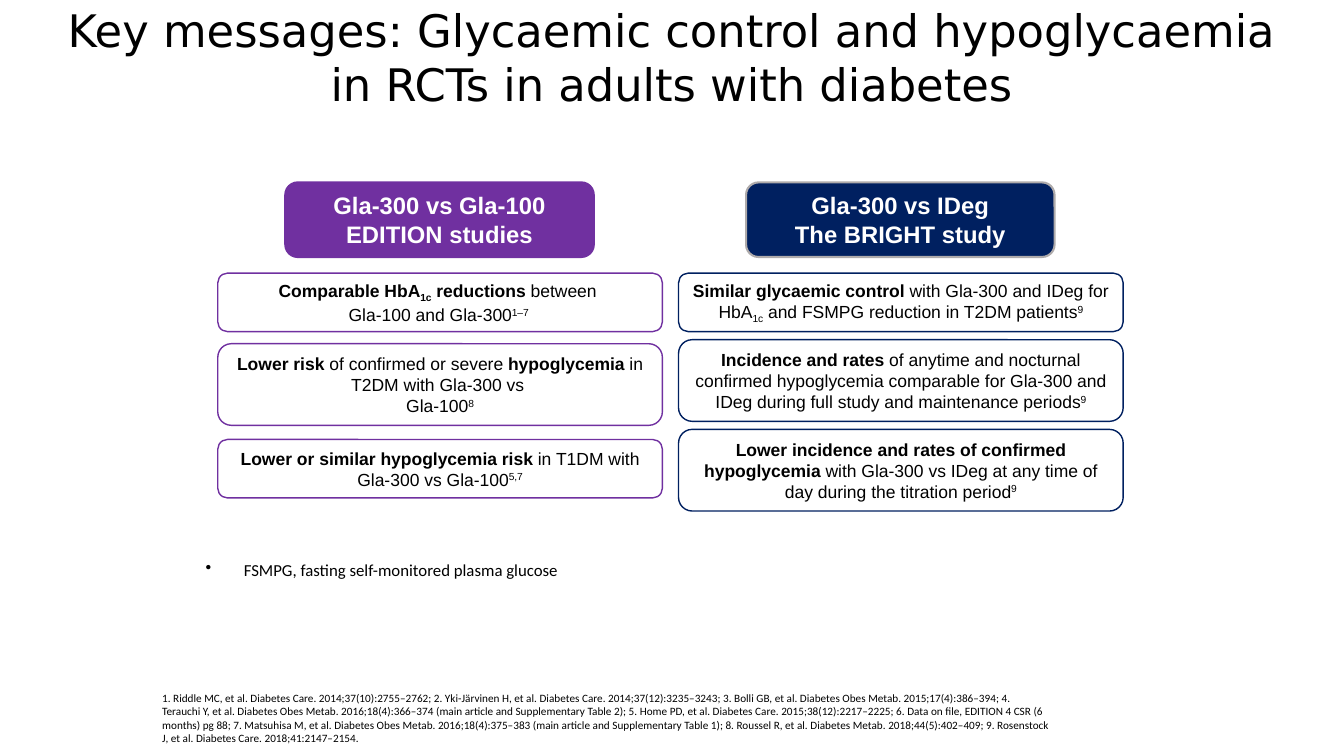
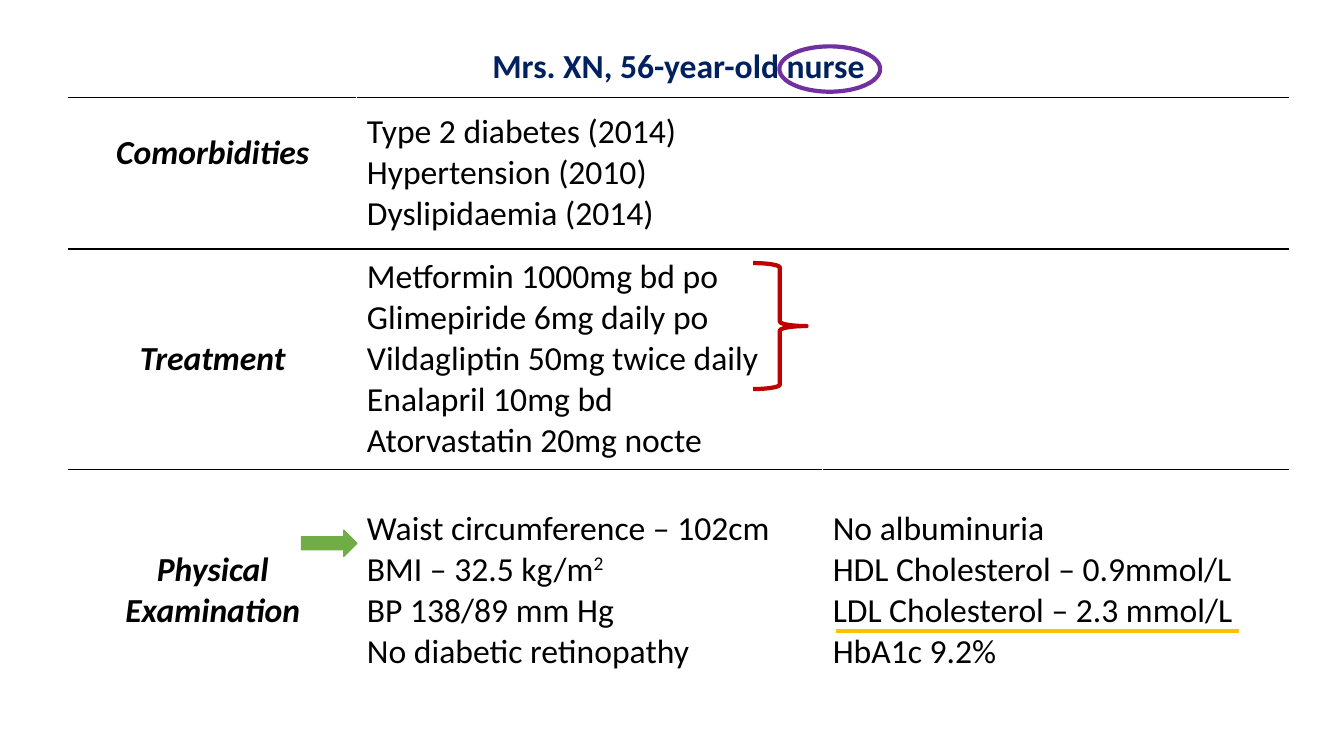
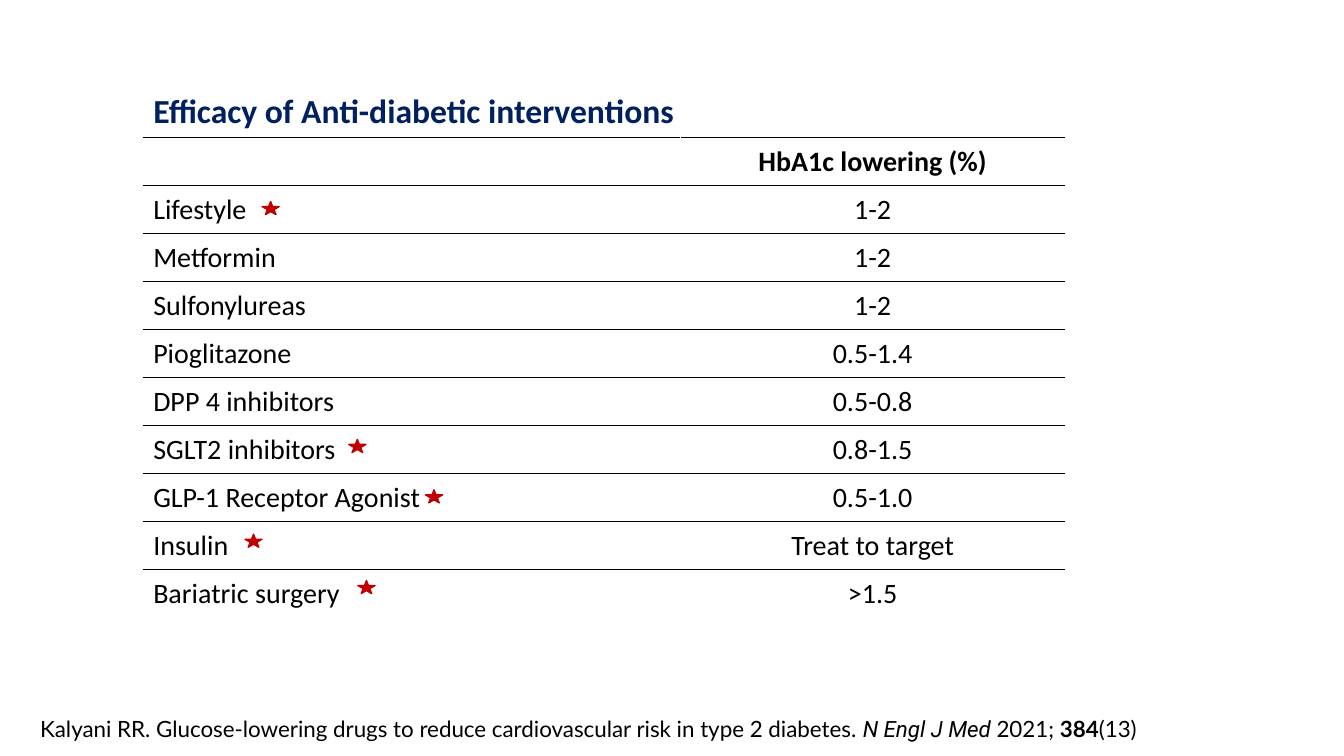
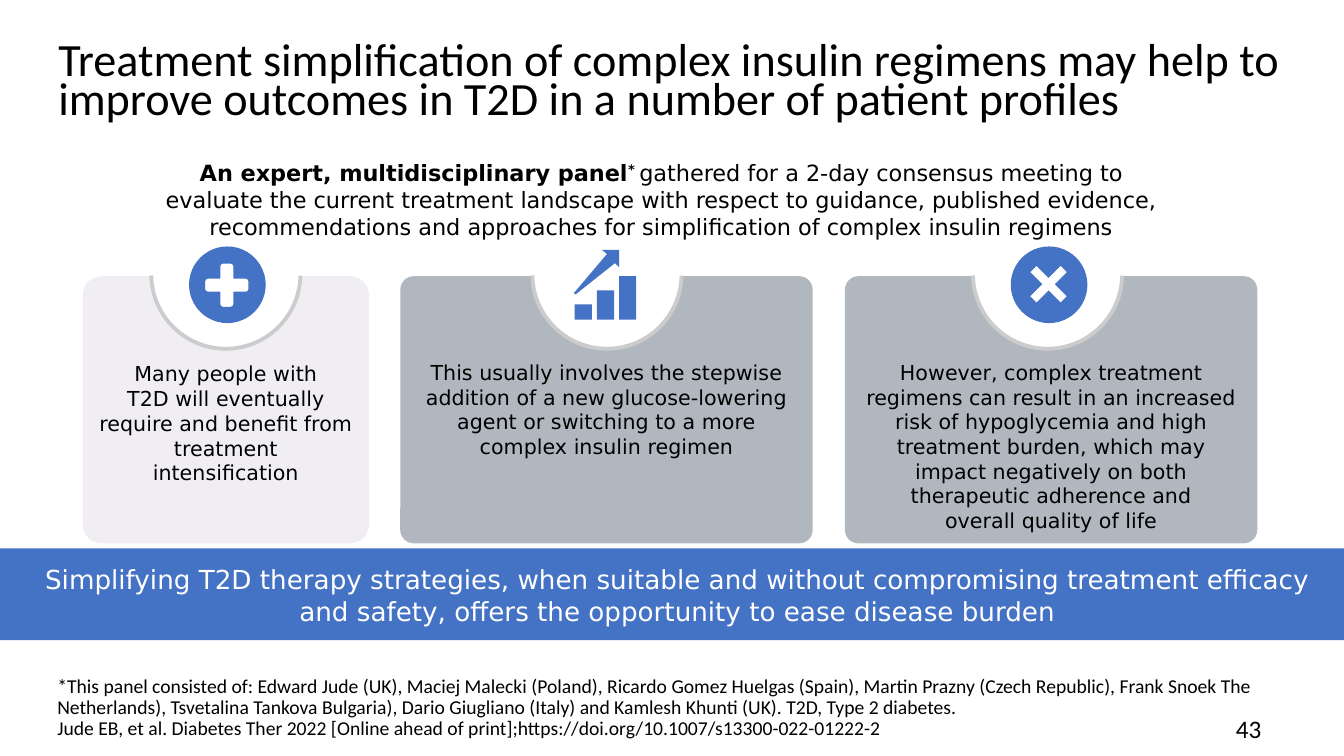
from lxml.etree import SubElement
from pptx import Presentation
from pptx.dml.color import RGBColor
from pptx.enum.shapes import MSO_CONNECTOR, MSO_SHAPE
from pptx.enum.text import MSO_ANCHOR, PP_ALIGN
from pptx.oxml.ns import qn
from pptx.util import Inches, Pt

BLACK = RGBColor(0x00, 0x00, 0x00)
WHITE = RGBColor(0xFF, 0xFF, 0xFF)
PURPLE = RGBColor(0x70, 0x30, 0xA0)
NAVY = RGBColor(0x00, 0x20, 0x60)
SILVER = RGBColor(0xAF, 0xAB, 0xAB)
RED = RGBColor(0xC0, 0x00, 0x00)
GREEN = RGBColor(0x70, 0xAD, 0x47)
GOLD = RGBColor(0xFF, 0xC0, 0x00)
BLUE = RGBColor(0x44, 0x72, 0xC4)
SLATE = RGBColor(0x3D, 0x4C, 0x5F)
LAVENDER = RGBColor(0xF1, 0xEE, 0xF3)
RING_GREY = RGBColor(0xCC, 0xCC, 0xCC)

CALIBRI, ARIAL, DEJAVU, LATO, ROBOTO = "Calibri", "Arial", "DejaVu Sans", "Lato", "Roboto"
CENTER, LEFT = PP_ALIGN.CENTER, PP_ALIGN.LEFT
TOP, MIDDLE = MSO_ANCHOR.TOP, MSO_ANCHOR.MIDDLE
BASELINES = {"^": "30000", "_": "-25000"}


class Deck:
    """Holds the presentation, its style and the current slide."""

    def __init__(self):
        self.presentation = Presentation()
        self.presentation.slide_width = Inches(13.33)
        self.presentation.slide_height = Inches(7.5)
        self.slide = None

    def new_slide(self):
        """Start a blank slide."""
        self.slide = self.presentation.slides.add_slide(self.presentation.slide_layouts[6])

    def fill_text(self, frame, paragraphs, size, font=CALIBRI, color=BLACK, marks="",
                  align=LEFT, spacing=None):
        """Fill a frame; marks are b bold, i italic, ^ superscript, _ subscript."""
        for index, content in enumerate(paragraphs):
            paragraph = frame.add_paragraph() if index else frame.paragraphs[0]
            paragraph.alignment = align
            if spacing:
                paragraph.line_spacing = spacing
            pieces = [(content, marks)] if isinstance(content, str) else content
            for text, piece_marks in pieces:
                for number, part in enumerate(text.split("\n")):
                    if number:
                        paragraph.add_line_break()
                        SubElement(paragraph._p[-1], qn("a:rPr"), sz=str(int(size * 100)))
                    run = paragraph.add_run()
                    run.text = part
                    run.font.size = Pt(size)
                    run.font.name = font
                    run.font.color.rgb = color
                    run.font.bold = "b" in piece_marks
                    run.font.italic = "i" in piece_marks
                    for mark in set(piece_marks) & set(BASELINES):
                        run._r.get_or_add_rPr().set("baseline", BASELINES[mark])

    def setup_frame(self, frame, insets, anchor):
        """Wrap a frame and set its insets and anchor."""
        frame.word_wrap = True
        frame.vertical_anchor = anchor
        frame.margin_left, frame.margin_top, frame.margin_right, frame.margin_bottom = (
            Inches(inset) for inset in insets)

    def text(self, box, paragraphs, size, insets=(0.1, 0.05, 0.1, 0.05), anchor=TOP, **style):
        """Add a text box and return its frame."""
        frame = self.slide.shapes.add_textbox(*map(Inches, box)).text_frame
        self.setup_frame(frame, insets, anchor)
        self.fill_text(frame, paragraphs, size, **style)
        return frame

    def paint(self, shape, fill, line, width):
        """Set fill and line and drop the shadow."""
        shape.shadow.inherit = False
        if fill is None:
            shape.fill.background()
        else:
            shape.fill.solid()
            shape.fill.fore_color.rgb = fill
        if line is None:
            shape.line.fill.background()
        else:
            shape.line.color.rgb = line
            shape.line.width = Pt(width)

    def shape(self, kind, box, fill=None, line=None, width=1, adjustments=(), alpha=None):
        """Add a preset shape."""
        shape = self.slide.shapes.add_shape(kind, *map(Inches, box))
        self.paint(shape, fill, line, width)
        for index, value in enumerate(adjustments):
            shape.adjustments[index] = value
        if alpha:
            color = shape._element.spPr.find(qn("a:solidFill"))[0]
            SubElement(color, qn("a:alpha"), val=str(alpha * 1000))
        return shape

    def panel(self, kind, box, paragraphs, size, insets=(0.1, 0.05, 0.1, 0.05),
              anchor=MIDDLE, font=ARIAL, color=BLACK, marks="", **look):
        """Add a shape with centred text."""
        frame = self.shape(kind, box, **look).text_frame
        self.setup_frame(frame, insets, anchor)
        self.fill_text(frame, paragraphs, size, font, color, marks, CENTER)

    def outline(self, contours, fill, line=None, width=0.75):
        """Add a freeform made of closed contours."""
        contours = [[(Inches(x), Inches(y)) for x, y in contour] for contour in contours]
        builder = self.slide.shapes.build_freeform(*contours[0][0])
        for index, contour in enumerate(contours):
            if index:
                builder.move_to(*contour[0])
            builder.add_line_segments(contour[1:], close=True)
        self.paint(builder.convert_to_shape(), fill, line, width)

    def line(self, start, end, color, width):
        """Add a straight line."""
        connector = self.slide.shapes.add_connector(
            MSO_CONNECTOR.STRAIGHT, *map(Inches, start + end))
        connector.line.color.rgb = color
        connector.line.width = Pt(width)
        SubElement(connector._element.spPr, qn("a:effectLst"))

    def table(self, box, columns, rows):
        """Add a white table with black rules between its rows."""
        table = self.slide.shapes.add_table(
            len(rows), len(columns), *map(Inches, box)).table
        table.first_row = table.horz_banding = False
        for column, width in zip(table.columns, columns):
            column.width = Inches(width)
        for index, (row, height) in enumerate(zip(table.rows, rows)):
            row.height = Inches(height)
            for cell in row.cells:
                cell.vertical_anchor = MIDDLE
                cell.fill.solid()
                cell.fill.fore_color.rgb = WHITE
                if index < len(rows) - 1:
                    self.rule(cell, "a:lnB")
                if index:
                    self.rule(cell, "a:lnT")
        return table

    def rule(self, cell, side):
        """Draw a black border on one side of a cell."""
        properties = cell._tc.get_or_add_tcPr()
        border = SubElement(properties, qn(side), w=str(Pt(1)))
        SubElement(SubElement(border, qn("a:solidFill")), qn("a:srgbClr"), val=str(BLACK))
        properties.insert(0, border)


def quarter_turns(center, arm):
    """Repeat the points of one arm at four right angles round a centre."""
    points = []
    for _ in range(4):
        points += [(center[0] + x, center[1] + y) for x, y in arm]
        arm = [(-y, x) for x, y in arm]
    return points


def key_messages(deck):
    """Build the slide of trial messages."""
    deck.new_slide()
    deck.text((0.52, 0.15, 12.29, 0.83),
              ["Key messages: Glycaemic control and hypoglycaemia in RCTs in adults with diabetes"],
              32, anchor=MIDDLE, font=DEJAVU, align=CENTER)
    note = deck.text((1.94, 5.5, 4.63, 0.31), ["FSMPG, fasting self-monitored plasma glucose"], 12)
    properties = note.paragraphs[0]._p.get_or_add_pPr()
    properties.set("marL", str(Inches(0.38)))
    properties.set("indent", str(Inches(-0.38)))
    SubElement(properties, qn("a:buChar"), char="•")
    deck.text((1.51, 6.81, 9.03, 0.52), [
        "1. Riddle MC, et al. Diabetes Care. 2014;37(10):2755–2762; "
        "2. Yki-Järvinen H, et al. Diabetes Care. 2014;37(12):3235–3243; "
        "3. Bolli GB, et al. Diabetes Obes Metab. 2015;17(4):386–394; "
        "4. Terauchi Y, et al. Diabetes Obes Metab. 2016;18(4):366–374 "
        "(main article and Supplementary Table 2); "
        "5. Home PD, et al. Diabetes Care. 2015;38(12):2217–2225; "
        "6. Data on file, EDITION 4 CSR (6 months) pg 88; "
        "7. Matsuhisa M, et al. Diabetes Obes Metab. 2016;18(4):375–383 "
        "(main article and Supplementary Table 1); "
        "8. Roussel R, et al. Diabetes Metab. 2018;44(5):402–409; "
        "9. Rosenstock J, et al. Diabetes Care. 2018;41:2147–2154."], 8)
    studies = [
        (2.16, PURPLE, PURPLE, ["Gla-300 vs Gla-100", "EDITION studies"], [
            (2.71, 0.58, [("Comparable HbA", "b"), ("1c", "b_"), (" reductions ", "b"),
                          ("between \nGla-100 and Gla-300", ""), ("1–7 ", "^")]),
            (3.41, 0.81, [("Lower risk ", "b"), ("of confirmed or severe ", ""),
                          ("hypoglycemia", "b"), (" in T2DM with Gla-300 vs \nGla-100", ""),
                          ("8", "^")]),
            (4.36, 0.58, [("Lower or similar hypoglycemia risk ", "b"),
                          ("in T1DM with Gla-300 vs Gla-100", ""), ("5,7", "^")])]),
        (6.73, NAVY, SILVER, ["Gla-300 vs IDeg", "The BRIGHT study"], [
            (2.71, 0.58, [("Similar glycaemic control ", "b"),
                          ("with Gla-300 and IDeg for HbA", ""), ("1c", "_"),
                          (" and FSMPG reduction in T2DM patients", ""), ("9", "^")]),
            (3.37, 0.81, [("Incidence and rates ", "b"),
                          ("of anytime and nocturnal confirmed hypoglycemia comparable for "
                           "Gla-300 and IDeg during full study and maintenance periods", ""),
                          ("9", "^")]),
            (4.26, 0.81, [("Lower incidence and rates of confirmed hypoglycemia ", "b"),
                          ("with Gla-300 vs IDeg at any time of day during the titration period",
                           ""), ("9", "^")])])]
    for left, color, edge, heading, messages in studies:
        deck.panel(MSO_SHAPE.ROUNDED_RECTANGLE, (left + 0.67, 1.81, 3.06, 0.74), heading, 17,
                   color=WHITE, marks="b", fill=color, line=edge, width=1.5)
        for top, height, message in messages:
            deck.panel(MSO_SHAPE.ROUNDED_RECTANGLE, (left, top, 4.41, height), [message], 12.5,
                       fill=WHITE, line=color)


def patient_case(deck):
    """Build the slide of the patient's history."""
    deck.new_slide()
    table = deck.table((0.68, 0.36, 12.09, 6.69), [2.86, 4.62, 4.62], [0.61, 1.5, 2.19, 2.39])
    table.cell(0, 0).merge(table.cell(0, 2))
    deck.fill_text(table.cell(0, 0).text_frame, ["Mrs. XN, 56-year-old nurse"], 24,
                   color=NAVY, marks="b", align=CENTER)
    sections = [
        ("Comorbidities", [["Type 2 diabetes (2014)", "Hypertension (2010)",
                            "Dyslipidaemia (2014)"]]),
        ("Treatment", [["Metformin 1000mg bd po", "Glimepiride 6mg daily po",
                        "Vildagliptin 50mg twice daily", "Enalapril 10mg bd",
                        "Atorvastatin 20mg nocte"]]),
        ("Physical Examination", [
            ["Waist circumference – 102cm", [("BMI – 32.5 kg/m", ""), ("2", "^")],
             "BP 138/89 mm Hg", "No diabetic retinopathy"],
            ["No albuminuria", "HDL Cholesterol – 0.9mmol/L", "LDL Cholesterol – 2.3 mmol/L",
             "HbA1c 9.2%"]])]
    for row, (heading, lists) in enumerate(sections, 1):
        deck.fill_text(table.cell(row, 0).text_frame, [heading], 24, marks="bi", align=CENTER)
        if len(lists) == 1:
            table.cell(row, 1).merge(table.cell(row, 2))
        for column, findings in enumerate(lists, 1):
            deck.fill_text(table.cell(row, column).text_frame, findings, 24)
    table.cell(1, 0).margin_bottom = Inches(0.45)
    deck.shape(MSO_SHAPE.OVAL, (7.73, 0.46, 1, 0.45), line=PURPLE, width=3)
    deck.shape(MSO_SHAPE.RIGHT_BRACE, (7.47, 2.61, 0.53, 1.25), line=RED, width=3)
    deck.shape(MSO_SHAPE.RIGHT_ARROW, (2.99, 5.26, 0.55, 0.26), fill=GREEN, line=GREEN)
    deck.line((8.29, 6.26), (12.29, 6.26), GOLD, 3)


def efficacy(deck):
    """Build the slide comparing interventions."""
    deck.new_slide()
    rows = [("", "HbA1c lowering (%)"), ("Lifestyle", "1-2"), ("Metformin", "1-2"),
            ("Sulfonylureas", "1-2"), ("Pioglitazone", "0.5-1.4"),
            ("DPP 4 inhibitors", "0.5-0.8"), ("SGLT2 inhibitors", "0.8-1.5"),
            ("GLP-1 Receptor Agonist", "0.5-1.0"), ("Insulin", "Treat to target"),
            ("Bariatric surgery", ">1.5")]
    count = len(rows) + 1
    table = deck.table((1.42, 0.86, 9.15, 5.24), [5.33, 3.81], [5.24 / count] * count)
    table.cell(0, 0).merge(table.cell(0, 1))
    table.cell(0, 0).vertical_anchor = TOP
    deck.fill_text(table.cell(0, 0).text_frame, ["Efficacy of Anti-diabetic interventions"], 24,
                   color=NAVY, marks="b")
    for row, (intervention, lowering) in enumerate(rows, 1):
        if intervention:
            deck.fill_text(table.cell(row, 0).text_frame, [intervention], 20)
        deck.fill_text(table.cell(row, 1).text_frame, [lowering], 20,
                       marks="" if intervention else "b", align=CENTER)
    citation = deck.text((0.3, 7.05, 11.38, 0.37), [[
        ("Kalyani RR. Glucose-lowering drugs to reduce cardiovascular risk in type 2 diabetes. ",
         ""), ("N Engl J Med ", "i"), ("2021; ", ""), ("384", "b"), ("(13)", "")]],
        16, font=LATO)
    citation.paragraphs[0].runs[1].font.name = ROBOTO
    for left, top in [(2.6, 2), (3.46, 4.36), (4.22, 4.86), (2.43, 5.3), (3.55, 5.76)]:
        deck.shape(MSO_SHAPE.STAR_5_POINT, (left, top, 0.17, 0.13), fill=RED, line=RED)


def simplification(deck):
    """Build the slide on simpler insulin regimens."""
    deck.new_slide()
    deck.text((12.16, 7.03, 0.69, 0.3), ["43"], 18)
    deck.text((0.48, 0.4, 12.37, 1.2), [
        "Treatment simplification of complex insulin regimens may help to improve outcomes "
        "in T2D in a number of patient profiles"], 33, spacing=0.7)
    deck.text((0.47, 6.66, 12.37, 0.72), [
        "*This panel consisted of: Edward Jude (UK), Maciej Malecki (Poland), Ricardo Gomez "
        "Huelgas (Spain), Martin Prazny (Czech Republic), Frank Snoek The Netherlands), "
        "Tsvetalina Tankova Bulgaria), Dario Giugliano (Italy) and Kamlesh Khunti (UK). "
        "T2D, Type 2 diabetes.\nJude EB, et al. Diabetes Ther 2022 [Online ahead of print];"
        "https://doi.org/10.1007/s13300-022-01222-2"], 14, spacing=0.9)
    cards = [
        (0.82, 2.84, 1.5, LAVENDER, None, 0.07,
         "Many people with\nT2D will eventually require and benefit from "
         "treatment intensification"),
        (3.97, 4.09, 5.28, SLATE, 40, 0.05,
         "This usually involves the stepwise addition of a new glucose-lowering agent or "
         "switching to a more complex insulin regimen"),
        (8.38, 4.09, 9.65, SLATE, 40, 0.05,
         "However, complex treatment regimens can result in an increased risk of hypoglycemia "
         "and high treatment burden, which may impact negatively on both therapeutic "
         "adherence and\noverall quality of life")]
    for left, width, ring_left, fill, alpha, corner, message in cards:
        deck.panel(MSO_SHAPE.ROUNDED_RECTANGLE, (left, 2.74, width, 2.65), [message], 14.7,
                   insets=(0.1, 0.79, 0.1, 0.05), anchor=TOP, font=DEJAVU,
                   fill=fill, alpha=alpha, adjustments=[corner])
        deck.shape(MSO_SHAPE.OVAL, (ring_left, 1.99, 1.48, 1.48), fill=WHITE)
        deck.shape(MSO_SHAPE.ARC, (ring_left, 1.98, 1.48, 1.48), line=RING_GREY, width=2.75,
                   adjustments=[0.69, 107.4])
    deck.text((0.19, 1.53, 12.54, 0.91), [[
        ("An expert, multidisciplinary panel", "b"), ("* ", "b^"),
        ("gathered for a 2-day consensus meeting to\nevaluate the current treatment landscape "
         "with respect to guidance, published evidence,\nrecommendations and approaches for "
         "simplification of complex insulin regimens", "")]],
        16, insets=(0.33, 0.05, 0.13, 0.05), font=DEJAVU, align=CENTER)
    deck.panel(MSO_SHAPE.RECTANGLE, (0, 5.44, 13.33, 0.91), [
        "Simplifying T2D therapy strategies, when suitable and without compromising treatment "
        "efficacy and safety, offers the opportunity to ease disease burden"], 18.7,
        insets=(0.39, 0.12, 0.28, 0.1), font=DEJAVU, color=WHITE, fill=BLUE)

    for left in (1.88, 10.03):
        deck.shape(MSO_SHAPE.OVAL, (left, 2.45, 0.75, 0.75), fill=BLUE, line=BLUE, width=0.75)
    plus_arm = [(-0.07, -0.07), (-0.07, -0.19), (-0.06, -0.21), (-0.04, -0.22),
                (0.04, -0.22), (0.06, -0.21), (0.07, -0.19)]
    deck.outline([quarter_turns((2.25, 2.83), plus_arm)], WHITE, BLUE)
    cross_arm = [(0, -0.06), (0.12, -0.18), (0.18, -0.12)]
    deck.outline([quarter_turns((10.4, 2.82), cross_arm)], WHITE)
    rising_arrow = [(6.14, 2.48), (5.97, 2.48), (6.02, 2.52), (5.69, 2.91), (5.71, 2.92),
                    (6.1, 2.61), (6.14, 2.65)]
    bars = []
    for index in range(3):
        left, top = 5.7 + 0.22 * index, 3.02 - 0.14 * index
        bars.append([(left, 3.17), (left + 0.17, 3.17), (left + 0.17, top), (left, top)])
    deck.outline([rising_arrow] + bars, BLUE)


def main():
    """Build the four slides and save them."""
    deck = Deck()
    for build in (key_messages, patient_case, efficacy, simplification):
        build(deck)
    deck.presentation.save("out.pptx")


if __name__ == "__main__":
    main()
